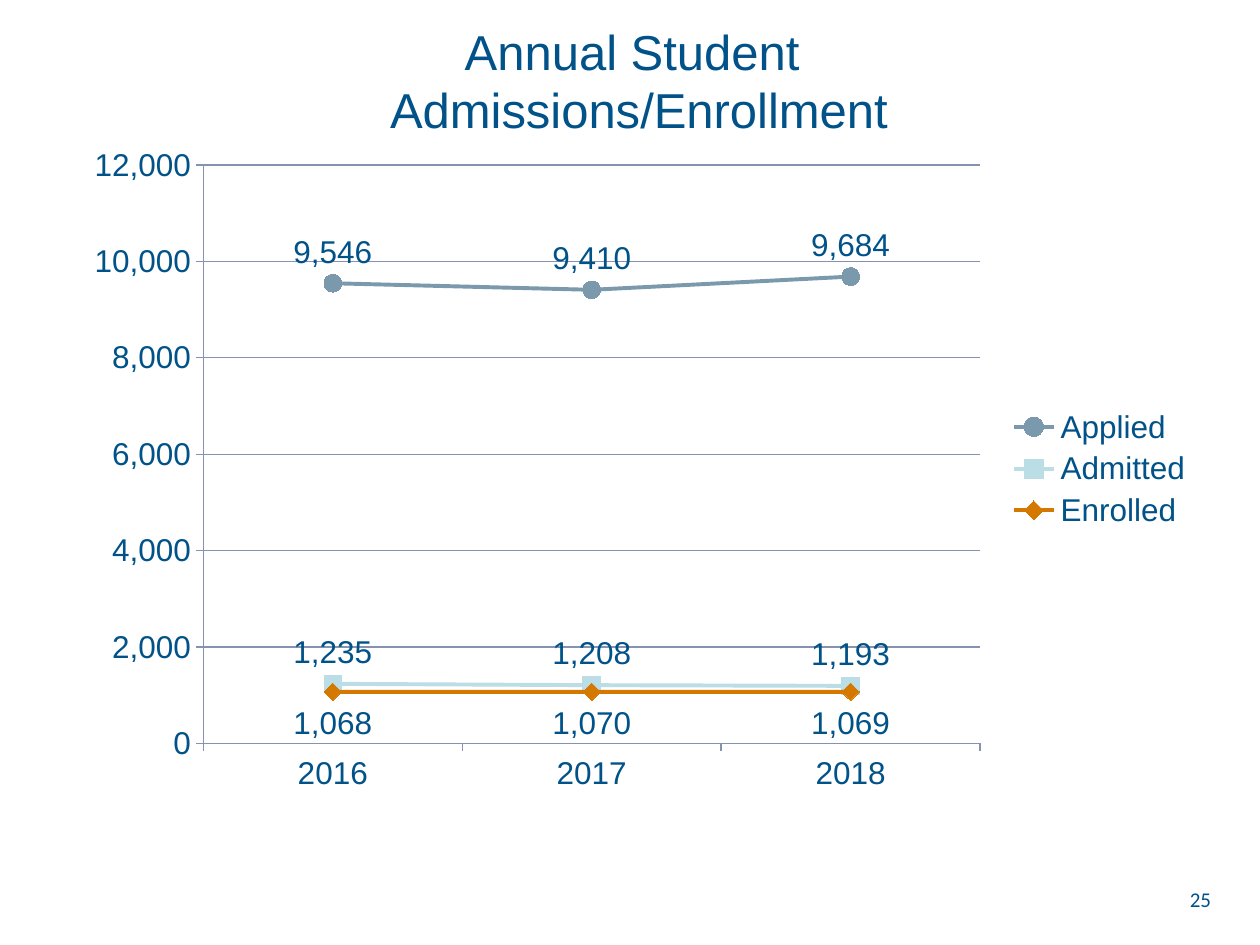
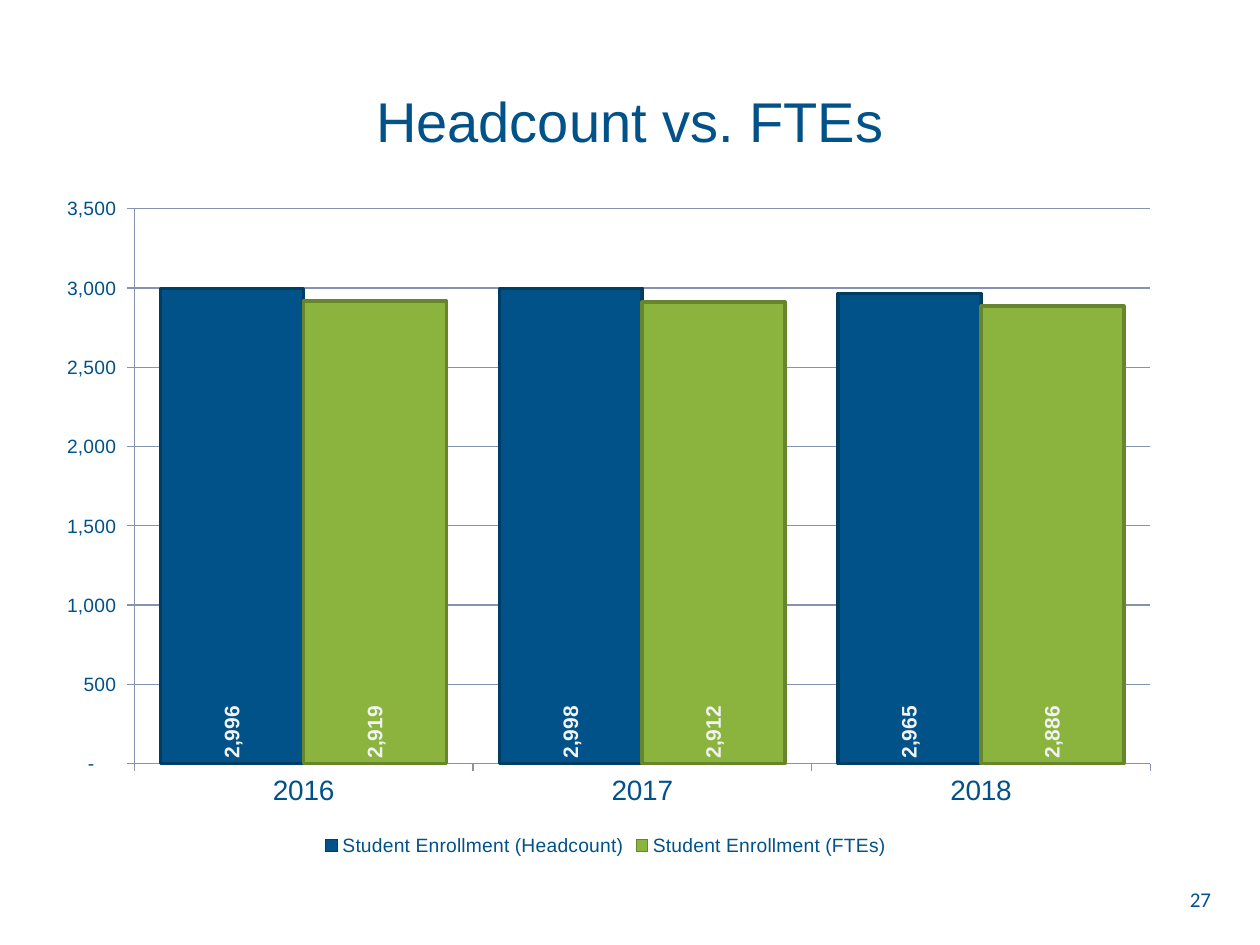
"""Build two slides of annual student admissions and enrollment charts."""
from lxml import etree
from pptx import Presentation
from pptx.chart.data import CategoryChartData
from pptx.dml.color import RGBColor
from pptx.enum.chart import XL_CHART_TYPE as ChartType, XL_LABEL_POSITION as LabelPosition
from pptx.enum.chart import XL_LEGEND_POSITION as LegendPosition, XL_MARKER_STYLE as Marker
from pptx.enum.chart import XL_TICK_MARK as TickMark
from pptx.enum.text import MSO_ANCHOR as Anchor, PP_ALIGN as Align
from pptx.oxml.ns import qn
from pptx.util import Inches, Pt

BLUE, GRID = "005288", "8592B0"
YEARS = ["2016", "2017", "2018"]
SLIDE_WIDTH, SLIDE_HEIGHT = 10, 7.5
CONTENT_WIDTH = 0.9 * SLIDE_WIDTH
NUMBER_RIGHT, NUMBER_TOP = 9.71, 6.99


def color(value):
    return RGBColor.from_string(value)


def style_font(font, size, value=BLUE, name="Arial"):
    font.size, font.name = Pt(size), name
    font.color.rgb = color(value)


pages = [
    dict(title="Annual Student \vAdmissions/Enrollment", title_size=28, title_at=(0.57, 0.01),
         number="25", number_size=(0.43, 0.31),
         kind=ChartType.LINE_MARKERS, chart_at=(0.57, 1.06), chart_height=5.32,
         plot=dict(x=0.116, y=0.047, w=0.685, h=0.863),
         axis_sizes=(18, 18), maximum=12000, step=2000, axis_format="#,##0",
         legend=LegendPosition.RIGHT, legend_size=18, label_size=18, label_color=BLUE,
         series=[("Applied", (9546, 9410, 9684), "7A99AC", Marker.CIRCLE, LabelPosition.ABOVE),
                 ("Admitted", (1235, 1208, 1193), "BBDDE6", Marker.SQUARE, LabelPosition.ABOVE),
                 ("Enrolled", (1068, 1070, 1069), "D57800", Marker.DIAMOND, LabelPosition.BELOW)]),
    dict(title="Headcount vs. FTEs", title_size=32, title_at=(0.5, 0.33),
         number="27", number_size=(2.33, 0.4),
         kind=ChartType.COLUMN_CLUSTERED, chart_at=(0.31, 1.47), chart_height=5.37,
         plot=dict(x=0.084, y=0.035, w=0.896, h=0.82),
         axis_sizes=(16, 11), maximum=3500, step=500,
         axis_format='_(* #,##0_);_(* \\(#,##0\\);_(* "-"??_);_(',
         legend=LegendPosition.BOTTOM, legend_size=11, label_size=12, label_color="F2F2F2",
         series=[("Student Enrollment (Headcount)", (2996, 2998, 2965), BLUE, "003D65",
                  LabelPosition.INSIDE_BASE),
                 ("Student Enrollment (FTEs)", (2919, 2912, 2886), "8AB43D", "66852D",
                  LabelPosition.INSIDE_BASE)]),
]

presentation = Presentation()
presentation.slide_width, presentation.slide_height = Inches(SLIDE_WIDTH), Inches(SLIDE_HEIGHT)

for page in pages:
    slide = presentation.slides.add_slide(presentation.slide_layouts[5])
    is_line = page["kind"] == ChartType.LINE_MARKERS

    title = slide.shapes.title
    title.left, title.top = map(Inches, page["title_at"])
    title.width, title.height = Inches(CONTENT_WIDTH), Inches(SLIDE_HEIGHT / 6)
    title.text_frame.text = page["title"]
    title.text_frame.vertical_anchor = Anchor.MIDDLE
    paragraph = title.text_frame.paragraphs[0]
    paragraph.alignment = Align.CENTER
    for run in paragraph.runs:
        style_font(run.font, page["title_size"])

    data = CategoryChartData(number_format="#,##0")
    data.categories = YEARS
    for name, values, *_ in page["series"]:
        data.add_series(name, values)
    left, top = page["chart_at"]
    chart = slide.shapes.add_chart(page["kind"], Inches(left), Inches(top), Inches(CONTENT_WIDTH),
                                   Inches(page["chart_height"]), data).chart
    style_font(chart.font, 18)
    chart.has_title = False
    chart.has_legend = True
    chart.legend.position = page["legend"]
    chart.legend.include_in_layout = False
    style_font(chart.legend.font, page["legend_size"])

    for axis, size in zip((chart.category_axis, chart.value_axis), page["axis_sizes"]):
        axis.major_tick_mark, axis.minor_tick_mark = TickMark.OUTSIDE, TickMark.NONE
        axis.format.line.color.rgb = color(GRID)
        axis.format.line.width = Pt(0.75)
        style_font(axis.tick_labels.font, size)
    axis.minimum_scale, axis.maximum_scale, axis.major_unit = 0, page["maximum"], page["step"]
    axis.has_major_gridlines = True
    axis.major_gridlines.format.line.color.rgb = color(GRID)
    axis.major_gridlines.format.line.width = Pt(0.75)
    axis.tick_labels.number_format = page["axis_format"]
    axis.tick_labels.number_format_is_linked = False

    plot_area = chart.plots[0]._element.getparent()
    for layout in plot_area.findall(qn("c:layout")):
        plot_area.remove(layout)
    layout = etree.Element(qn("c:layout"))
    manual = etree.SubElement(layout, qn("c:manualLayout"))
    settings = dict(layoutTarget="inner", xMode="edge", yMode="edge", **page["plot"])
    for tag, value in settings.items():
        etree.SubElement(manual, qn(f"c:{tag}")).set("val", str(value))
    plot_area.insert(0, layout)

    plot = chart.plots[0]
    plot.vary_by_categories = False
    if not is_line:
        plot.gap_width, plot.overlap = 37, 0
    for series, (_, _, fill, detail, position) in zip(plot.series, page["series"]):
        line = series.format.line
        if is_line:
            series.smooth = False
            line.color.rgb, line.width = color(fill), Pt(2.25)
            series.marker.style, series.marker.size = detail, 10
            series.marker.format.fill.solid()
            series.marker.format.fill.fore_color.rgb = color(fill)
            series.marker.format.line.fill.background()
        else:
            series.format.fill.solid()
            series.format.fill.fore_color.rgb = color(fill)
            line.color.rgb, line.width = color(detail), Pt(2)
        labels = series.data_labels
        labels.show_value, labels.position = True, position
        labels.number_format, labels.number_format_is_linked = "#,##0", False
        style_font(labels.font, page["label_size"], page["label_color"])
        if not is_line:
            labels.font.bold = True
            body = labels._element.find(qn("c:txPr")).find(qn("a:bodyPr"))
            body.set("rot", "-5400000")
            body.set("vert", "horz")

    width, height = page["number_size"]
    number = slide.shapes.add_textbox(Inches(NUMBER_RIGHT - width), Inches(NUMBER_TOP),
                                      Inches(width), Inches(height))
    number.text_frame.word_wrap = True
    number.text_frame.text = page["number"]
    paragraph = number.text_frame.paragraphs[0]
    paragraph.alignment = Align.RIGHT
    style_font(paragraph.runs[0].font, 12, name="Calibri")

presentation.save("out.pptx")
